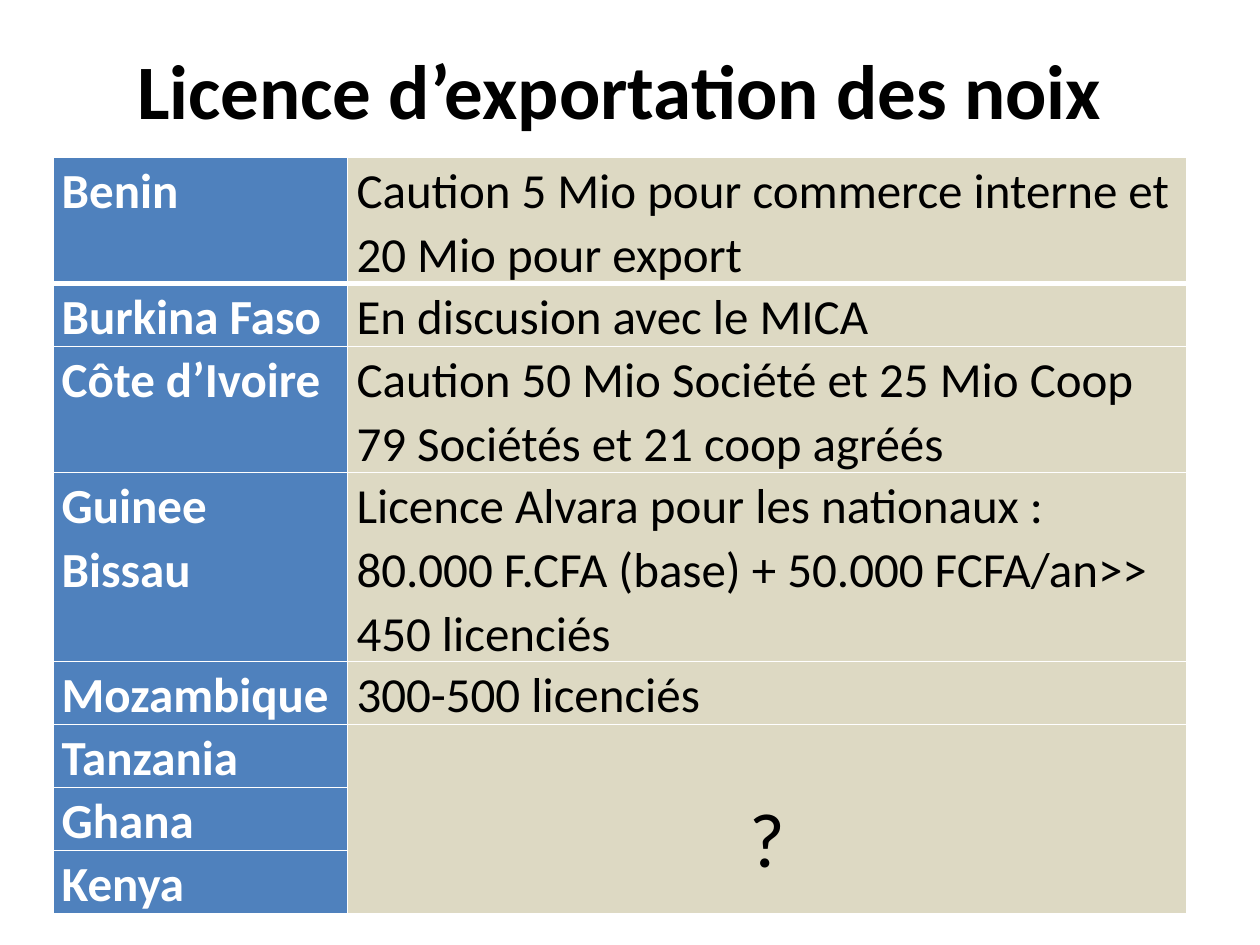
import pptx
import pptx.util
import pptx.dml.color
import pptx.enum.text
import pptx.oxml
import pptx.oxml.ns
from dataclasses import dataclass

Inches, Pt = pptx.util.Inches, pptx.util.Pt
ALIGN, ANCHOR = pptx.enum.text.PP_ALIGN, pptx.enum.text.MSO_ANCHOR


@dataclass(frozen=True)
class Theme:
    """Colours, type sizes and spacing of the slide."""
    font: str = "Calibri"
    ink: str = "000000"
    paper: str = "FFFFFF"
    country: str = "4F81BD"
    detail: str = "DDD9C3"
    large: int = 44
    body: int = 28
    leading: float = 1.07
    inset: float = 0.07


THEME = Theme()
WIDTH, HEIGHT = 10, 7.5
LEFT, TABLE_WIDTH, TABLE_TOP = 0.42, 9, 1.25
COUNTRY_SHARE = 0.26
LINE_HEIGHT = 0.5
ROWS = [
    ("Benin", ["Caution 5 Mio pour commerce interne et 20 Mio pour export"], 2),
    ("Burkina Faso", ["En discusion avec le MICA"], 1),
    ("Côte d’Ivoire", ["Caution 50 Mio Société et 25 Mio Coop",
                       "79 Sociétés et 21 coop agréés"], 2),
    ("Guinee Bissau", ["Licence Alvara pour les nationaux : 80.000 F.CFA (base)"
                       " + 50.000 FCFA/an>> 450 licenciés"], 3),
    ("Mozambique", ["300-500 licenciés"], 1),
    ("Tanzania", [], 1),
    ("Ghana", [], 1),
    ("Kenya", [], 1),
]
OPEN_ROW = 5


def set_attrs(obj, values):
    """Set each attribute of obj from a dict."""
    for name, value in values.items():
        setattr(obj, name, value)


def write(tf, lines, size, color, bold=False, align=ALIGN.LEFT, leading=1.0):
    """Fill a text frame with one formatted paragraph per line."""
    for i, line in enumerate(lines):
        p = tf.add_paragraph() if i else tf.paragraphs[0]
        set_attrs(p, {"alignment": align, "line_spacing": leading})
        r = p.add_run()
        r.text = line
        set_attrs(r.font, {"name": THEME.font, "size": Pt(size), "bold": bold})
        r.font.color.rgb = pptx.dml.color.RGBColor.from_string(color)


def add_title(slide, text):
    """Add the centred slide title."""
    sp = slide.shapes.add_textbox(Inches(LEFT), Inches(0.08),
                                  Inches(TABLE_WIDTH), Inches(1.25))
    tf = sp.text_frame
    set_attrs(tf, {"word_wrap": True, "vertical_anchor": ANCHOR.MIDDLE})
    write(tf, [text], THEME.large, THEME.ink, bold=True, align=ALIGN.CENTER)


def style_cell(cell, fill, bottom=1):
    """Give a cell its insets, borders and fill."""
    inset = Inches(THEME.inset)
    set_attrs(cell, {"margin_left": inset, "margin_right": inset,
                     "margin_top": 0, "margin_bottom": 0})
    tc_pr = cell._tc.get_or_add_tcPr()
    for side, width in {"L": 1, "R": 1, "T": 1, "B": bottom}.items():
        tc_pr.append(pptx.oxml.parse_xml(
            f'<a:ln{side} {pptx.oxml.ns.nsdecls("a")} w="{Pt(width)}"><a:solidFill>'
            f'<a:srgbClr val="{THEME.paper}"/></a:solidFill></a:ln{side}>'))
    cell.fill.solid()
    cell.fill.fore_color.rgb = pptx.dml.color.RGBColor.from_string(fill)


def add_licence_table(slide):
    """Add the table of countries and their licence rules."""
    height = LINE_HEIGHT * sum(lines for _, _, lines in ROWS)
    frame = slide.shapes.add_table(len(ROWS), 2, Inches(LEFT), Inches(TABLE_TOP),
                                   Inches(TABLE_WIDTH), Inches(height))
    table = frame.table
    set_attrs(table, {"first_row": False, "horz_banding": False})
    for column, share in zip(table.columns, (COUNTRY_SHARE, 1 - COUNTRY_SHARE)):
        column.width = Inches(TABLE_WIDTH * share)
    for i, (country, details, lines) in enumerate(ROWS):
        table.rows[i].height = Inches(LINE_HEIGHT * lines)
        name, detail = table.cell(i, 0), table.cell(i, 1)
        bottom = 1 if i else 3
        style_cell(name, THEME.country, bottom)
        style_cell(detail, THEME.detail, bottom)
        write(name.text_frame, [country], THEME.body, THEME.paper, bold=True,
              leading=THEME.leading)
        write(detail.text_frame, details, THEME.body, THEME.ink,
              leading=THEME.leading)
    unknown = table.cell(OPEN_ROW, 1)
    unknown.merge(table.cell(len(ROWS) - 1, 1))
    unknown.margin_top = Inches(LINE_HEIGHT)
    write(unknown.text_frame, ["?"], THEME.large, THEME.ink, align=ALIGN.CENTER,
          leading=THEME.leading)


def main():
    """Build and save the slide."""
    prs = pptx.Presentation()
    set_attrs(prs, {"slide_width": Inches(WIDTH), "slide_height": Inches(HEIGHT)})
    slide = prs.slides.add_slide(prs.slide_layouts[6])
    add_title(slide, "Licence d’exportation des noix")
    add_licence_table(slide)
    prs.save("out.pptx")


if __name__ == "__main__":
    main()
